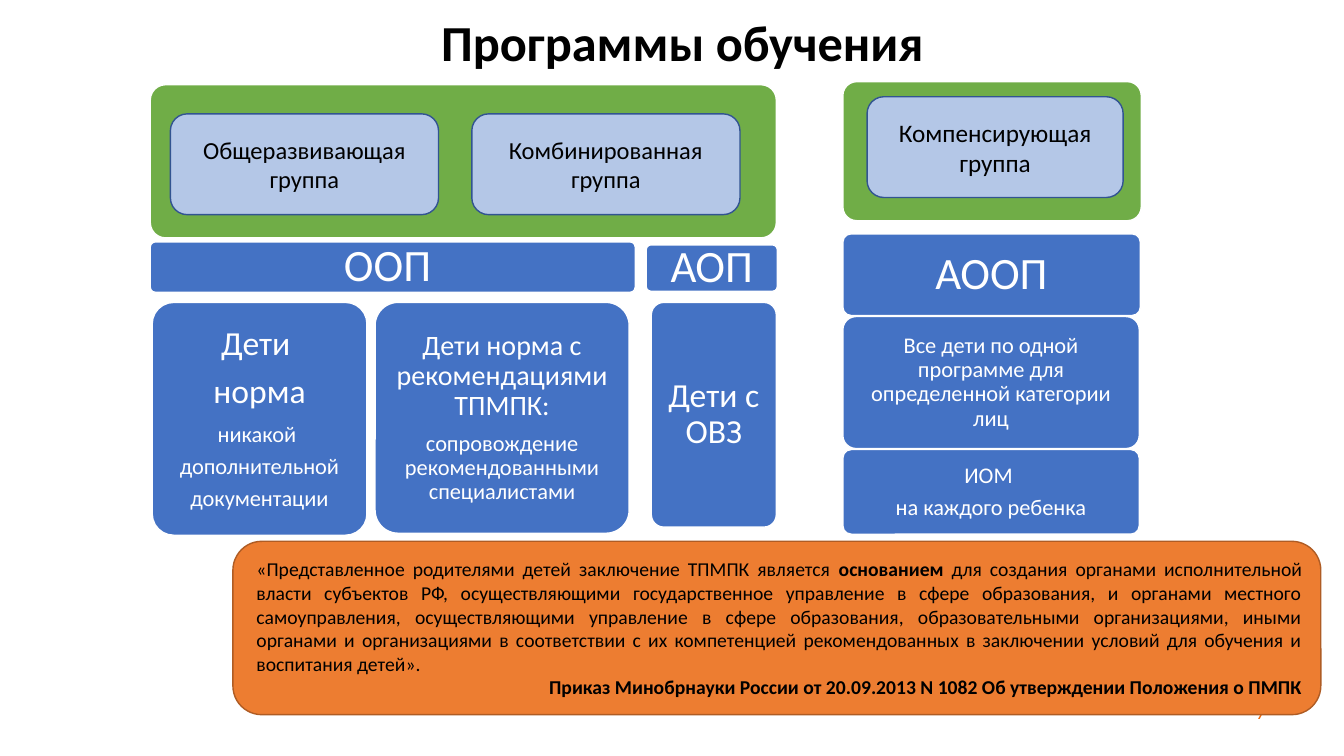
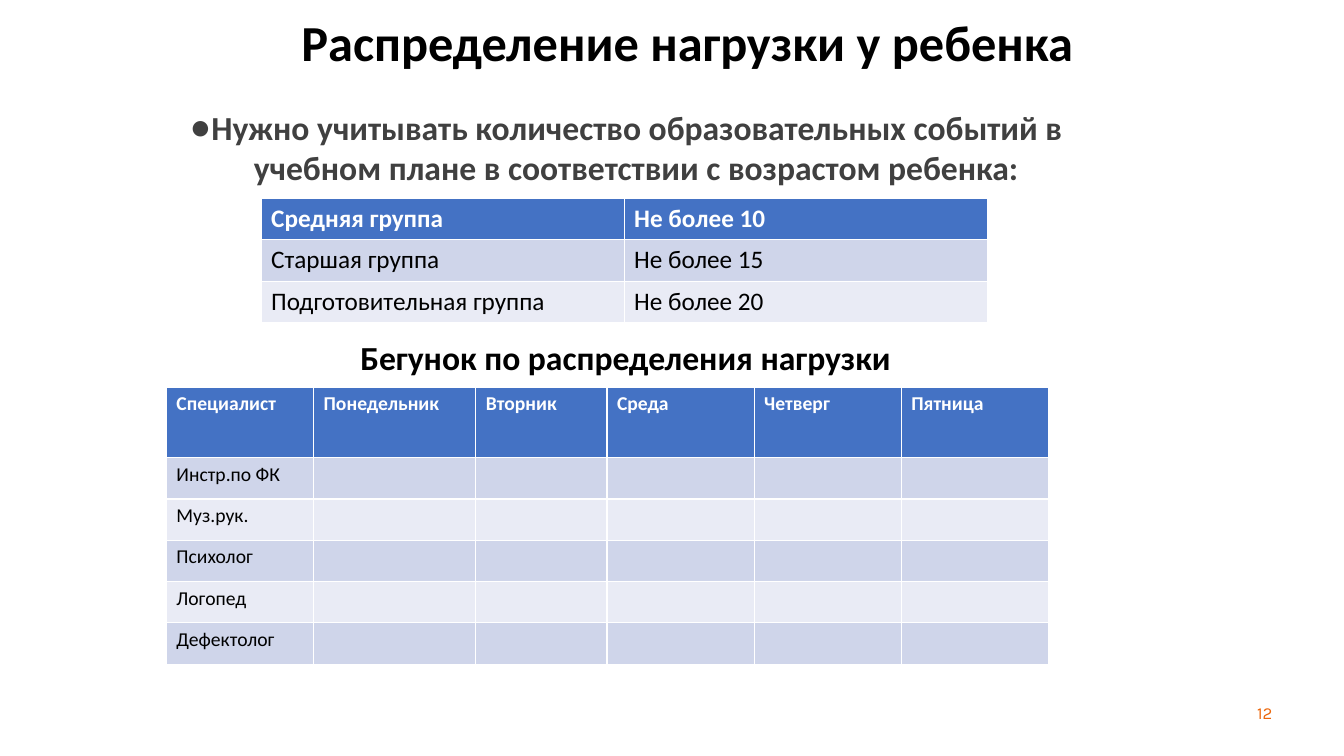
from lxml import etree
from pptx import Presentation
from pptx.dml.color import RGBColor
from pptx.enum.shapes import MSO_SHAPE
from pptx.enum.text import MSO_ANCHOR, MSO_AUTO_SIZE, PP_ALIGN
from pptx.oxml.ns import qn
from pptx.util import Inches, Pt

WHITE = RGBColor(0xFF, 0xFF, 0xFF)
BLACK = RGBColor(0, 0, 0)
GREY = RGBColor(0x40, 0x40, 0x40)
GREEN = RGBColor(0x70, 0xAD, 0x47)
BLUE = RGBColor(0x44, 0x72, 0xC4)
PALE_BLUE = RGBColor(0xB4, 0xC7, 0xE7)
DARK_BLUE = RGBColor(0x32, 0x54, 0x91)
ORANGE = RGBColor(0xED, 0x7D, 0x31)
DARK_ORANGE = RGBColor(0xAF, 0x5C, 0x24)
PAGE_ORANGE = RGBColor(0xEC, 0x67, 0x0B)
BANDS = (RGBColor(0xCF, 0xD5, 0xEA), RGBColor(0xE9, 0xEB, 0xF5))
FONT, PAGE_FONT = "Calibri", "Karla"

# Content of the programmes slide: places are left, top, width, height
GROUP_PANELS = [(1.49, 0.84, 6.21, 1.52), (8.36, 0.81, 2.96, 1.38)]
GROUPS = [
    ("Компенсирующая группа", 18, (8.6, 0.96, 2.54, 1)),
    ("Общеразвивающая группа", 17.5, (1.69, 1.13, 2.66, 1)),
    ("Комбинированная группа", 17.5, (4.68, 1.13, 2.66, 1)),
]
# Place, text inset, lines with their size
PROGRAMMES = [
    ((1.49, 2.4, 4.81, 0.5), 0.13, [("ООП ", 32)]),
    ((1.51, 3, 2.13, 2.31), 0.1, [
        ("Дети ", 24), ("норма", 24), ("никакой ", 16),
        ("дополнительной", 16), ("документации", 16)]),
    ((3.72, 3, 2.52, 2.29), 0.08, [
        ("Дети норма с рекомендациями ТПМПК:", 20),
        ("сопровождение рекомендованными специалистами", 16)]),
    ((6.41, 2.43, 1.3, 0.46), 0.13, [("АОП", 32)]),
    ((6.46, 3, 1.24, 2.23), 0.1, [("Дети с ОВЗ", 24)]),
    ((8.36, 2.32, 2.95, 0.81), 0.13, [("АООП", 32)]),
    ((8.36, 3.14, 2.94, 1.31), 0.07, [
        ("Все дети по одной программе для определенной категории лиц", 16)]),
    ((8.36, 4.46, 2.94, 0.84), 0.07, [
        ("ИОМ ", 16), ("на каждого ребенка", 16)]),
]
QUOTE = [
    ("«Представленное родителями детей заключение ТПМПК является ", False),
    ("основанием", True),
    (" для создания органами исполнительной власти субъектов РФ, "
     "осуществляющими государственное управление в сфере образования, и "
     "органами местного самоуправления, осуществляющими управление в сфере "
     "образования, образовательными организациями, иными органами и "
     "организациями в соответствии с их компетенцией рекомендованных в "
     "заключении условий для обучения и воспитания детей».", False),
]
QUOTE_SOURCE = ("Приказ Минобрнауки России от 20.09.2013 N 1082 "
                "Об утверждении Положения о ПМПК")

# Content of the workload slide
WORKLOAD_RULE = ("Нужно учитывать количество образовательных событий в учебном "
                 "плане в соответствии с возрастом ребенка:")
LIMITS = [
    ("Средняя группа", "Не более 10"),
    ("Старшая группа", "Не более 15"),
    ("Подготовительная группа", "Не более 20"),
]
SCHEDULE_HEADING = "Бегунок по распределения нагрузки"
DAYS = ("Понедельник", "Вторник", "Среда", "Четверг", "Пятница")
SPECIALISTS = ("Инстр.по ФК", "Муз.рук.", "Психолог", "Логопед", "Дефектолог")
SCHEDULE = [("Специалист", *DAYS)] + [
    (name, *[""] * len(DAYS)) for name in SPECIALISTS]


def inches(place):
    return [Inches(value) for value in place]


def set_margins(frame, left, top, right, bottom):
    frame.margin_left, frame.margin_top = Inches(left), Inches(top)
    frame.margin_right, frame.margin_bottom = Inches(right), Inches(bottom)


def style_font(font, size, color, bold=False, name=FONT):
    font.name, font.size, font.bold = name, Pt(size), bold
    font.color.rgb = color


def write(paragraph, text, size, color, bold=False, align=PP_ALIGN.CENTER, name=FONT):
    paragraph.text = text
    paragraph.alignment = align
    for run in paragraph.runs:
        style_font(run.font, size, color, bold, name)


def add_text(slide, place):
    frame = slide.shapes.add_textbox(*inches(place)).text_frame
    frame.word_wrap = True
    return frame


def add_box(slide, place, fill, line, radius=None):
    box = slide.shapes.add_shape(MSO_SHAPE.ROUNDED_RECTANGLE, *inches(place))
    if radius is not None:
        box.adjustments[0] = radius
    box.shadow.inherit = False
    box.fill.solid()
    box.fill.fore_color.rgb = fill
    box.line.color.rgb = line
    box.line.width = Pt(1)
    frame = box.text_frame
    frame.word_wrap = True
    frame.vertical_anchor = MSO_ANCHOR.MIDDLE
    return frame


def add_titled_slide(prs, title_text, title_left, page):
    slide = prs.slides.add_slide(prs.slide_layouts[5])
    title = slide.shapes.title
    title.left, title.top, title.width, title.height = inches((title_left, 0.2, 10.24, 0.49))
    frame = title.text_frame
    frame.word_wrap = True
    frame.auto_size = MSO_AUTO_SIZE.NONE
    frame.vertical_anchor = MSO_ANCHOR.MIDDLE
    set_margins(frame, 0.1, 0.1, 0.1, 0.1)
    write(frame.paragraphs[0], title_text, 36, BLACK, True)
    frame.paragraphs[0].line_spacing = 0.9

    page_frame = add_text(slide, (12.37, 6.92, 0.44, 0.36))
    set_margins(page_frame, 0.1, 0.05, 0, 0.05)
    write(page_frame.paragraphs[0], page, 12, PAGE_ORANGE,
          align=PP_ALIGN.LEFT, name=PAGE_FONT)
    return slide


def add_banded_table(slide, rows, left, top, widths, heights, size):
    place = (left, top, sum(widths), sum(heights))
    table = slide.shapes.add_table(len(rows), len(widths), *inches(place)).table
    for column, width in zip(table.columns, widths):
        column.width = Inches(width)
    for r, (row, height) in enumerate(zip(rows, heights)):
        table.rows[r].height = Inches(height)
        header = r == 0
        for c, text in enumerate(row):
            cell = table.cell(r, c)
            cell.fill.solid()
            cell.fill.fore_color.rgb = BLUE if header else BANDS[(r - 1) % 2]
            write(cell.text_frame.paragraphs[0], text, size,
                  WHITE if header else BLACK, header, PP_ALIGN.LEFT)


def build_programmes(prs):
    slide = add_titled_slide(prs, "Программы обучения", 1.65, "7")
    for place in GROUP_PANELS:
        add_box(slide, place, GREEN, WHITE, 0.1)

    # Programmes and the children they serve
    for place, inset, lines in PROGRAMMES:
        frame = add_box(slide, place, BLUE, WHITE, 0.1)
        set_margins(frame, inset, inset, inset, inset)
        for i, (text, size) in enumerate(lines):
            paragraph = frame.add_paragraph() if i else frame.paragraphs[0]
            write(paragraph, text, size, WHITE)
            paragraph.line_spacing = 0.9
            paragraph.space_after = Pt(0.35 * size)

    # Kinds of groups
    for text, size, place in GROUPS:
        frame = add_box(slide, place, PALE_BLUE, DARK_BLUE)
        write(frame.paragraphs[0], text, size, BLACK)

    # Quotation from the order
    frame = add_box(slide, (2.31, 5.37, 10.79, 1.72), ORANGE, DARK_ORANGE)
    set_margins(frame, 0.15, 0.05, 0.1, 0.05)
    quote = frame.paragraphs[0]
    quote.alignment = PP_ALIGN.JUSTIFY
    for text, bold in QUOTE:
        run = quote.add_run()
        run.text = text
        style_font(run.font, 14, BLACK, bold)
    write(frame.add_paragraph(), QUOTE_SOURCE, 14, BLACK, True, PP_ALIGN.RIGHT)


def build_workload(prs):
    slide = add_titled_slide(prs, "Распределение нагрузки у ребенка", 1.7, "12")

    # Bulleted rule
    rule = add_text(slide, (1.55, 1.01, 9.27, 0.92)).paragraphs[0]
    props = rule._p.get_or_add_pPr()
    props.set("marL", str(Inches(0.25)))
    props.set("indent", str(Inches(-0.2)))
    etree.SubElement(props, qn("a:buSzPct")).set("val", "130000")
    etree.SubElement(props, qn("a:buFont")).set("typeface", FONT)
    etree.SubElement(props, qn("a:buChar")).set("char", "•")
    write(rule, WORKLOAD_RULE, 24, GREY, True)

    add_banded_table(slide, LIMITS, 2.59, 1.97, [3.6] * 2, [0.41] * 3, 18)

    # Weekly schedule
    heading = add_text(slide, (1.99, 3.29, 8.43, 0.5))
    write(heading.paragraphs[0], SCHEDULE_HEADING, 24, BLACK, True)
    add_banded_table(slide, SCHEDULE, 1.65, 3.84, [1.46, 1.61, 1.3] + [1.46] * 3,
                     [0.7] + [0.41] * len(SPECIALISTS), 14)


def main():
    prs = Presentation()
    prs.slide_width, prs.slide_height = Inches(13.33), Inches(7.5)
    build_programmes(prs)
    build_workload(prs)
    prs.save("out.pptx")


if __name__ == "__main__":
    main()
